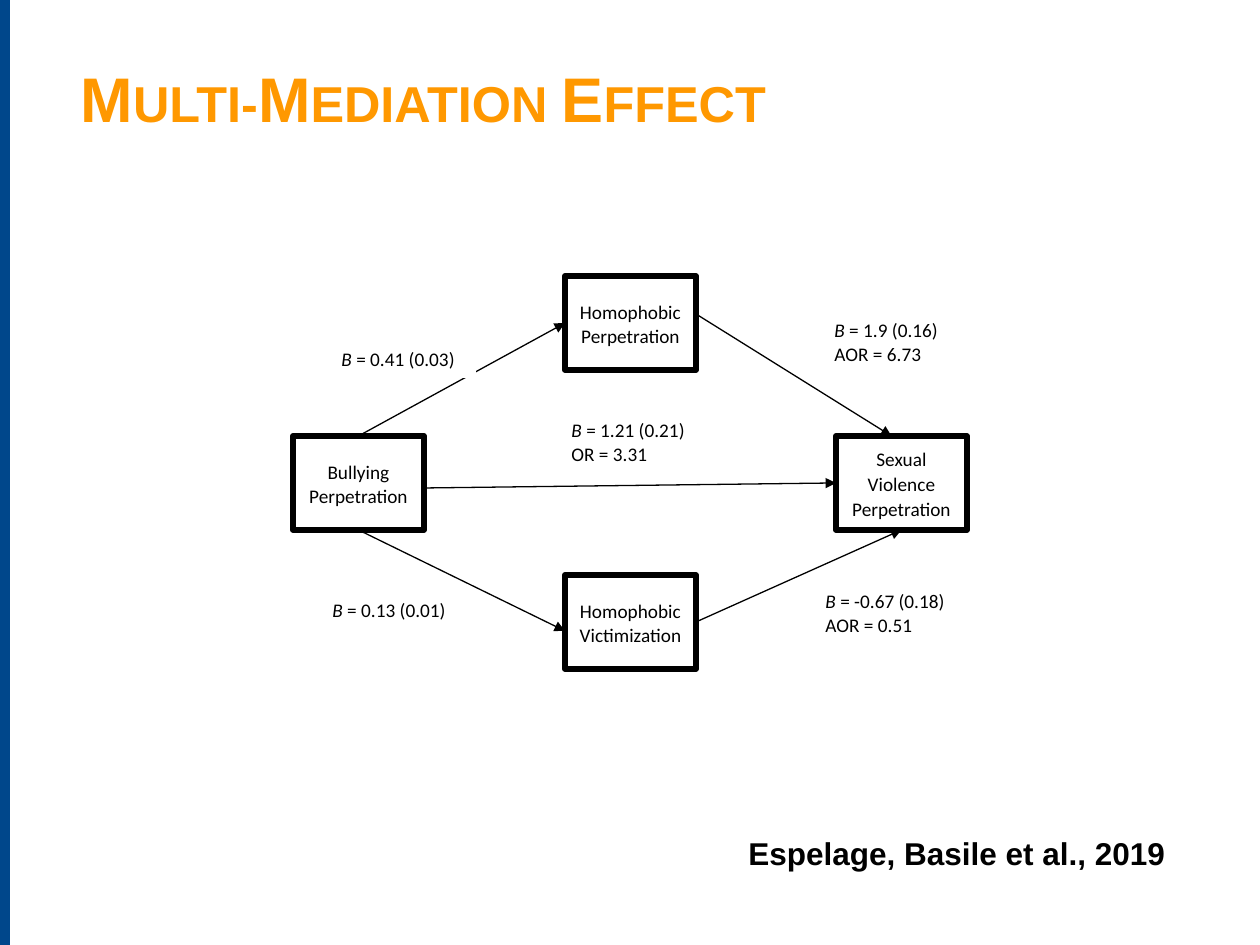
from dataclasses import dataclass

from lxml import etree
from pptx import Presentation
from pptx import util as u
from pptx.dml.color import RGBColor
from pptx.enum import shapes, text
from pptx.oxml.ns import qn

PX = 914400 // 126
BLACK = RGBColor(0x00, 0x00, 0x00)
WHITE = RGBColor(0xFF, 0xFF, 0xFF)
BLUE = RGBColor(0x00, 0x47, 0x8B)
ORANGE = RGBColor(0xFF, 0x98, 0x00)
BOX_W, BOX_H = 131, 94
TOP, LEFT, BOTTOM, RIGHT = range(4)
BODY = {"name": "Calibri", "size": u.Pt(11)}


@dataclass
class Box:
    name: str
    x: int
    y: int
    lines: list[str]


@dataclass
class End:
    """A point on a box side, offset px from the middle of that side."""
    box: str
    side: int
    offset: int = 0


@dataclass
class Label:
    x: int
    y: int
    w: int
    h: int
    estimate: str
    ratio: str = ""


BOXES = [
    Box("bullying", 293, 436, ["Bullying", "Perpetration"]),
    Box("homophobic", 565, 276, ["Homophobic Perpetration"]),
    Box("sexual", 836, 436, ["Sexual Violence", "Perpetration"]),
    Box("victim", 565, 575, ["Homophobic", "Victimization"]),
]
PATHS = [
    (End("bullying", TOP), End("homophobic", LEFT)),
    (End("bullying", RIGHT, 5), End("sexual", LEFT)),
    (End("homophobic", RIGHT, -9), End("sexual", TOP, -10)),
    (End("bullying", BOTTOM), End("victim", LEFT, 9)),
    (End("victim", RIGHT), End("sexual", BOTTOM)),
]
LABELS = [
    Label(329, 340, 147, 38, " = 0.41 (0.03)"),
    Label(822, 310, 145, 68, " = 1.9 (0.16)", "AOR = 6.73"),
    Label(559, 410, 146, 58, " = 1.21 (0.21)", "OR = 3.31"),
    Label(813, 581, 147, 72, " = -0.67 (0.18)", "AOR = 0.51"),
    Label(320, 591, 151, 60, " = 0.13 (0.01)"),
]


def px(*values: int) -> list[int]:
    return [v * PX for v in values]


def add_run(p, words: str, color: RGBColor, **formats):
    r = p.add_run()
    r.text = words
    r.font.color.rgb = color
    for key, value in formats.items():
        setattr(r.font, key, value)
    return r


def add_rect(s, x: int, y: int, w: int, h: int, fill: RGBColor, line_pt: float = 0):
    sp = s.shapes.add_shape(shapes.MSO_SHAPE.RECTANGLE, *px(x, y, w, h))
    sp.shadow.inherit = False
    sp.fill.solid()
    sp.fill.fore_color.rgb = fill
    if line_pt:
        sp.line.color.rgb = BLACK
        sp.line.width = u.Pt(line_pt)
    else:
        sp.line.fill.background()
    return sp


def add_paragraphs(tf, count: int, align) -> list:
    ps = [tf.paragraphs[0]] + [tf.add_paragraph() for _ in range(count - 1)]
    for p in ps:
        p.alignment = align
        p.line_spacing = 1.07
    return ps


def add_box(s, box: Box):
    sp = add_rect(s, box.x, box.y, BOX_W, BOX_H, WHITE, 3.35)
    tf = sp.text_frame
    tf.vertical_anchor = text.MSO_ANCHOR.MIDDLE
    for p, line in zip(add_paragraphs(tf, len(box.lines), text.PP_ALIGN.CENTER), box.lines):
        add_run(p, line, BLACK, **BODY)
    return sp


def add_label(s, label: Label) -> None:
    tf = add_rect(s, label.x, label.y, label.w, label.h, WHITE).text_frame
    tf.vertical_anchor = text.MSO_ANCHOR.TOP
    ps = add_paragraphs(tf, 2 if label.ratio else 1, text.PP_ALIGN.LEFT)
    add_run(ps[0], "B", BLACK, italic=True, **BODY)
    add_run(ps[0], label.estimate, BLACK, **BODY)
    if label.ratio:
        add_run(ps[1], label.ratio, BLACK, **BODY)


def end_point(end: End, sp) -> tuple[int, int]:
    shift = end.offset * PX
    if end.side in (TOP, BOTTOM):
        return sp.left + sp.width // 2 + shift, sp.top + (end.side == BOTTOM) * sp.height
    return sp.left + (end.side == RIGHT) * sp.width, sp.top + sp.height // 2 + shift


def add_arrow(s, begin: End, end: End, nodes: dict) -> None:
    a, b = nodes[begin.box], nodes[end.box]
    line = s.shapes.add_connector(
        shapes.MSO_CONNECTOR.STRAIGHT, *end_point(begin, a), *end_point(end, b))
    if not begin.offset:
        line.begin_connect(a, begin.side)
    if not end.offset:
        line.end_connect(b, end.side)
    line.line.color.rgb = BLACK
    line.line.width = u.Pt(0.75)
    etree.SubElement(line.line._get_or_add_ln(), qn("a:tailEnd"), type="triangle")
    etree.SubElement(line._element.spPr, qn("a:effectLst"))


def add_title(s) -> None:
    title = s.shapes.title
    title.left, title.top, title.width, title.height = px(68, 53, 1124, 136)
    tf = title.text_frame
    tf.vertical_anchor = text.MSO_ANCHOR.TOP
    p = tf.paragraphs[0]
    p.alignment = text.PP_ALIGN.LEFT
    r = add_run(p, "Multi-Mediation Effect", ORANGE, name="Arial", size=u.Pt(36), bold=True)
    r.font._element.set("cap", "small")


def add_citation(s) -> None:
    tf = s.shapes.add_textbox(*px(736, 828, 446, 50)).text_frame
    tf.word_wrap = False
    tf.auto_size = text.MSO_AUTO_SIZE.SHAPE_TO_FIT_TEXT
    add_run(tf.paragraphs[0], "Espelage, Basile et al., 2019", BLACK,
            name="Arial", size=u.Pt(18), bold=True)


def main() -> None:
    prs = Presentation()
    prs.slide_width, prs.slide_height = u.Inches(10), u.Inches(7.5)
    s = prs.slides.add_slide(prs.slide_layouts[5])
    add_rect(s, 0, 0, 10, 945, BLUE)
    add_title(s)
    nodes = {box.name: add_box(s, box) for box in BOXES}
    for begin, end in PATHS:
        add_arrow(s, begin, end, nodes)
    for label in LABELS:
        add_label(s, label)
    add_citation(s)
    prs.save("out.pptx")


if __name__ == "__main__":
    main()
